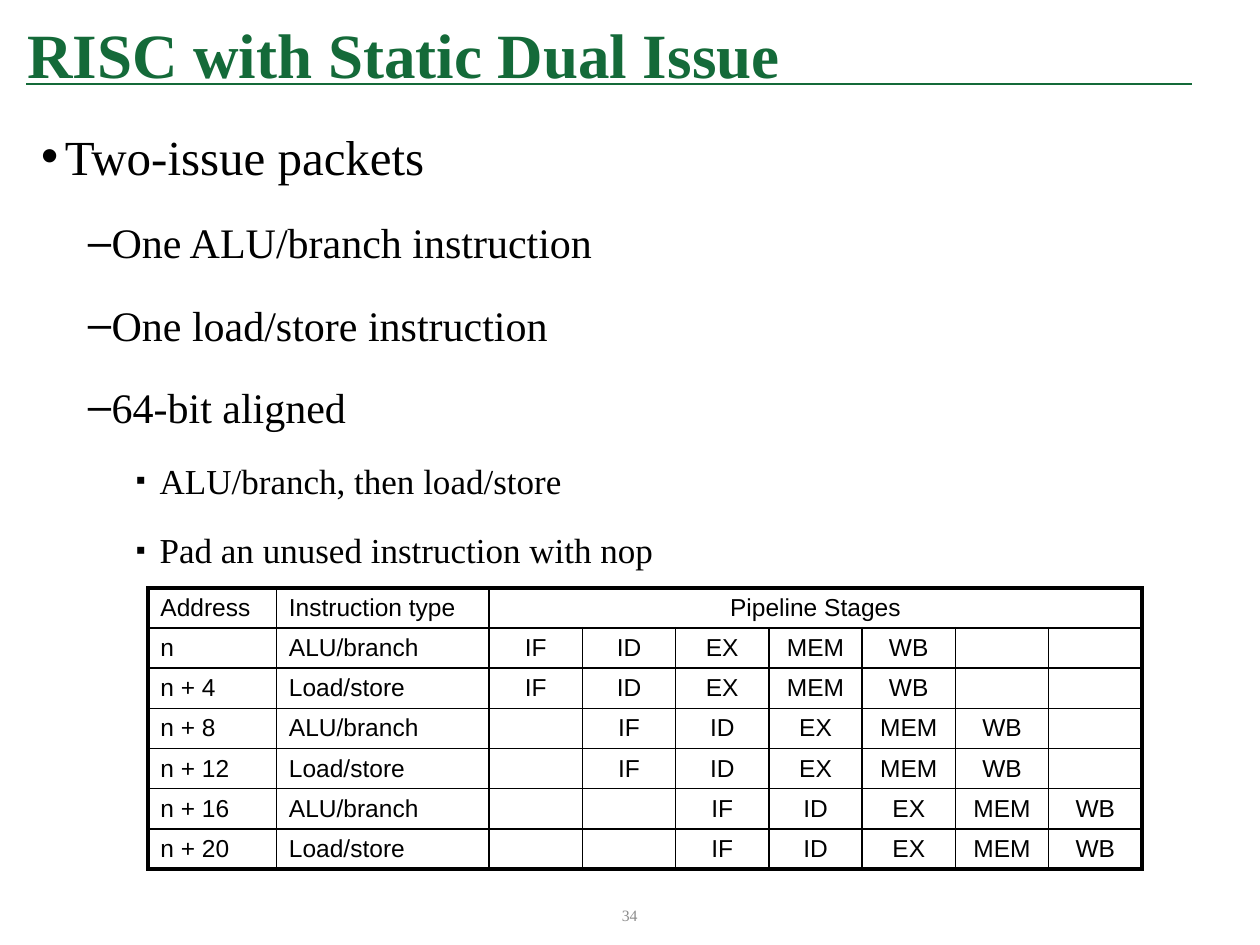
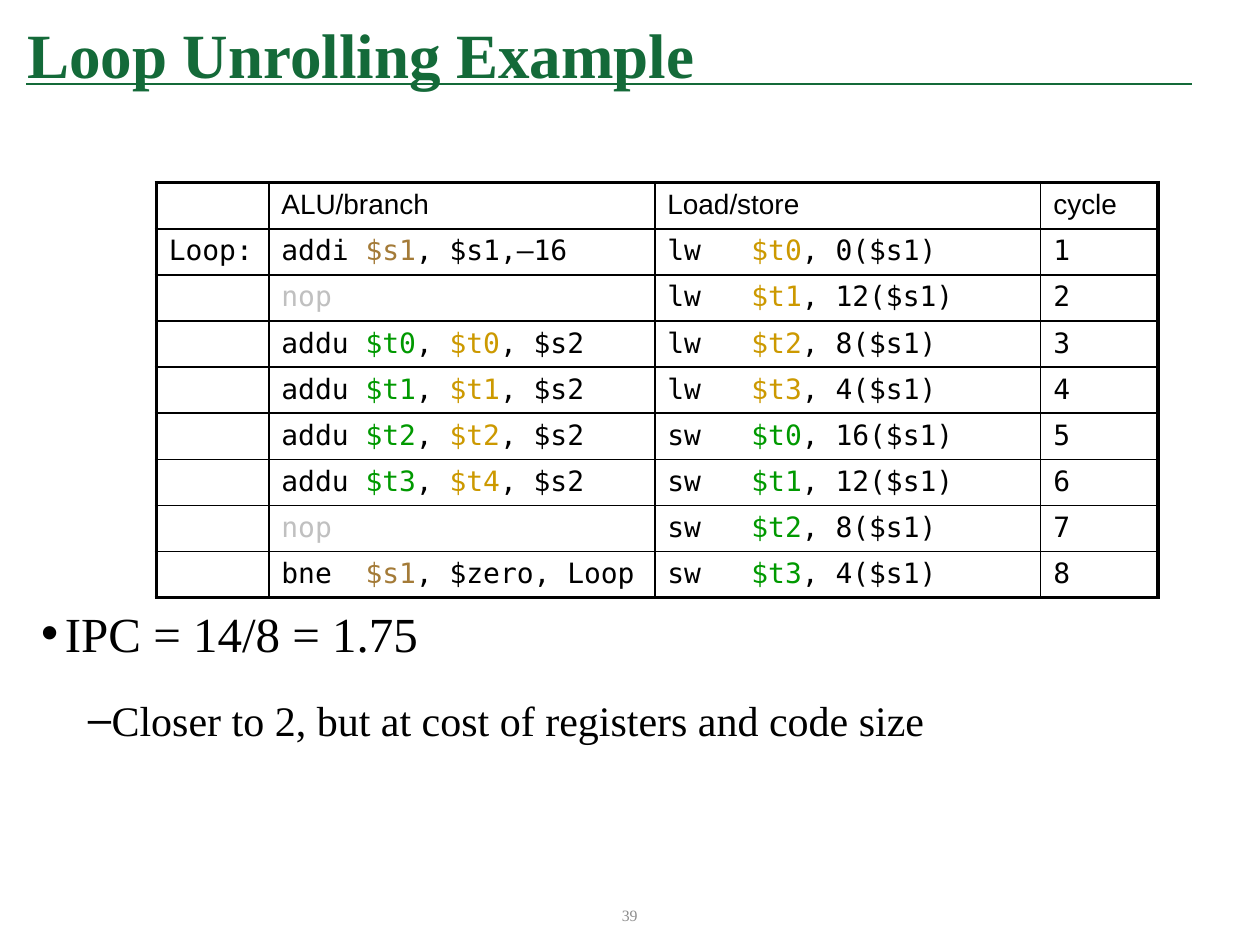
import pptx
import pptx.util
import pptx.dml.color
import pptx.enum.shapes
import pptx.enum.text
import pptx.oxml.ns
from lxml import etree

Cm = pptx.util.Cm
Pt = pptx.util.Pt
qn = pptx.oxml.ns.qn
ALIGN = pptx.enum.text.PP_ALIGN
ANCHOR = pptx.enum.text.MSO_ANCHOR

COLORS = {
    "title": "146A39",
    "text": "000000",
    "number": "8C8C8C",
    "base": "A47B38",
    "loaded": "CC9900",
    "result": "009900",
    "idle": "C0C0C0",
}
SERIF, SANS, MONO = "Times New Roman", "Arial", "DejaVu Sans Mono"

# level: (bullet, bullet size in %, font size, left margin in cm, space before)
LEVELS = [
    ("•", 100, 28, 0.48, 7.5),
    ("–", 100, 24, 1.42, 3.75),
    ("▪", 80, 20, 2.39, 3.75),
]
HANGING = 0.48
THIN, HEADER_RULE, OUTER = 1, 1.5, 2.25


def rgb(name):
    return pptx.dml.color.RGBColor.from_string(COLORS[name])


class Deck:
    def __init__(self):
        self.prs = pptx.Presentation()
        self.prs.slide_width = Cm(25.4)
        self.prs.slide_height = Cm(19.05)
        self.s = None

    def run(self, p, text, size, font, color="text", bold=False):
        r = p.add_run()
        r.text = text
        r.font.size = Pt(size)
        r.font.name = font
        r.font.bold = bold
        r.font.color.rgb = rgb(color)

    def text_box(self, x, y, w, h, anchor):
        tf = self.s.shapes.add_textbox(Cm(x), Cm(y), Cm(w), Cm(h)).text_frame
        tf.word_wrap = True
        tf.vertical_anchor = anchor
        return tf

    def slide(self, title, number, points, body_top):
        """Add a slide with rule, bullet points, title and slide number."""
        self.s = self.prs.slides.add_slide(self.prs.slide_layouts[6])
        self.rule(0.53, 24.03, 1.7)
        self.bullets(points, body_top)
        tf = self.text_box(0.3, 0.16, 23.34, 1.85, ANCHOR.MIDDLE)
        self.run(tf.paragraphs[0], title, 36, SERIF, "title", True)
        tf = self.text_box(9.47, 17.95, 6.45, 1.02, ANCHOR.MIDDLE)
        tf.paragraphs[0].alignment = ALIGN.CENTER
        self.run(tf.paragraphs[0], str(number), 9, SERIF, "number")

    def rule(self, x1, x2, y):
        line = self.s.shapes.add_connector(
            pptx.enum.shapes.MSO_CONNECTOR.STRAIGHT, Cm(x1), Cm(y), Cm(x2), Cm(y))
        line.line.color.rgb = rgb("title")
        line.line.width = Pt(1)
        etree.SubElement(line._element.spPr, qn("a:effectLst"))

    def bullets(self, points, top, bottom=17.78):
        tf = self.text_box(0.58, top, 24.28, bottom - top, ANCHOR.TOP)
        for i, (level, text) in enumerate(points):
            char, percent, size, margin, before = LEVELS[level]
            p = tf.add_paragraph() if i else tf.paragraphs[0]
            p.level = level
            p.line_spacing = 1.5
            if i:
                p.space_before = Pt(before)
            pPr = p._p.get_or_add_pPr()
            pPr.set("marL", str(Cm(margin)))
            pPr.set("indent", str(-Cm(HANGING)))
            etree.SubElement(pPr, qn("a:buSzPct"), val=str(percent * 1000))
            etree.SubElement(pPr, qn("a:buFont"), typeface=SANS)
            etree.SubElement(pPr, qn("a:buChar"), char=char)
            self.run(p, text, size, SERIF)

    def table(self, x, y, widths, row_height, rows, size, body_font,
              header_span=None, centered_from=None):
        """Draw rows whose cells are lists of (text, colour) runs.

        header_span is the header column that stretches to the right edge,
        centered_from the first column with centred text.
        """
        n_rows, n_cols = len(rows), len(widths)
        frame = self.s.shapes.add_table(
            n_rows, n_cols, Cm(x), Cm(y), Cm(sum(widths)), Cm(row_height * n_rows))
        tbl = frame.table
        tbl.first_row = tbl.horz_banding = False
        for col, width in zip(tbl.columns, widths):
            col.width = Cm(width)
        for row in tbl.rows:
            row.height = Cm(row_height)
        if header_span is not None:
            tbl.cell(0, header_span).merge(tbl.cell(0, n_cols - 1))

        for i, row in enumerate(rows):
            for j, runs in enumerate(row):
                cell = tbl.cell(i, j)
                cell.margin_bottom = Cm(0.05)
                p = cell.text_frame.paragraphs[0]
                if centered_from is not None and j >= centered_from:
                    p.alignment = ALIGN.CENTER
                for text, color in runs:
                    self.run(p, text, size, body_font if i else SANS, color)
                if not runs:
                    etree.SubElement(p._p, qn("a:endParaRPr"), sz=str(size * 100))
                cell.fill.background()
                if not cell.is_spanned:
                    last = j + cell.span_width if cell.is_merge_origin else j + 1
                    self.borders(cell, {
                        "L": OUTER if j == 0 else THIN,
                        "R": OUTER if last == n_cols else THIN,
                        "T": {0: OUTER, 1: HEADER_RULE}.get(i, THIN),
                        "B": {0: HEADER_RULE, n_rows - 1: OUTER}.get(i, THIN),
                    })

    def borders(self, cell, widths):
        tcPr = cell._tc.get_or_add_tcPr()
        for i, (side, width) in enumerate(widths.items()):
            ln = etree.Element(qn("a:ln" + side), w=str(Pt(width)))
            fill = etree.SubElement(ln, qn("a:solidFill"))
            etree.SubElement(fill, qn("a:srgbClr"), val=COLORS["text"])
            tcPr.insert(i, ln)


def plain(text):
    return [(text, "text")] if text else []


def instruction(op, reg, color, rest):
    return [(f"{op:<5}", "text"), (reg, color), (rest, "text")]


def addu(dst, src):
    return instruction("addu", dst, "result", ", ") + [(src, "loaded"), (", $s2", "text")]


def pipeline_rows():
    """Each issue packet holds two instructions and starts one cycle later."""
    stages = ["IF", "ID", "EX", "MEM", "WB"]
    slots = 7
    rows = [["Address", "Instruction type", "Pipeline Stages"] + [""] * (slots - 1)]
    for i in range(6):
        start = i // 2
        address = f"n + {4 * i}" if i else "n"
        kind = "Load/store" if i % 2 else "ALU/branch"
        idle = slots - len(stages) - start
        rows.append([address, kind] + [""] * start + stages + [""] * idle)
    return [[plain(text) for text in row] for row in rows]


def unrolled_rows():
    nop = [("nop", "idle")]
    alu = [
        instruction("addi", "$s1", "base", ", $s1,–16"),
        nop,
        addu("$t0", "$t0"),
        addu("$t1", "$t1"),
        addu("$t2", "$t2"),
        addu("$t3", "$t4"),
        nop,
        instruction("bne", "$s1", "base", ", $zero, Loop"),
    ]
    memory = [
        instruction(op, f"$t{i}", color, f", {offset}($s1)")
        for op, color, offsets in [("lw", "loaded", (0, 12, 8, 4)),
                                   ("sw", "result", (16, 12, 8, 4))]
        for i, offset in enumerate(offsets)
    ]
    rows = [[plain(text) for text in ("", "ALU/branch", "Load/store", "cycle")]]
    for cycle, (left, right) in enumerate(zip(alu, memory), 1):
        label = "Loop:" if cycle == 1 else ""
        rows.append([plain(label), left, right, plain(str(cycle))])
    return rows


def main():
    deck = Deck()

    deck.slide("RISC with Static Dual Issue", 34, [
        (0, "Two-issue packets"),
        (1, "One ALU/branch instruction"),
        (1, "One load/store instruction"),
        (1, "64-bit aligned"),
        (2, "ALU/branch, then load/store"),
        (2, "Pad an unused instruction with nop"),
    ], body_top=1.83)
    deck.table(2.98, 11.85, [2.59, 4.29] + [1.88] * 7, 0.81, pipeline_rows(),
               14, SANS, header_span=2, centered_from=2)

    deck.slide("Loop Unrolling Example", 39, [
        (0, "IPC = 14/8 = 1.75"),
        (1, "Closer to 2, but at cost of registers and code size"),
    ], body_top=11.45)
    deck.table(3.15, 3.68, [2.27, 7.78, 7.78, 2.36], 0.93, unrolled_rows(), 16, MONO)

    deck.prs.save("out.pptx")


if __name__ == "__main__":
    main()
